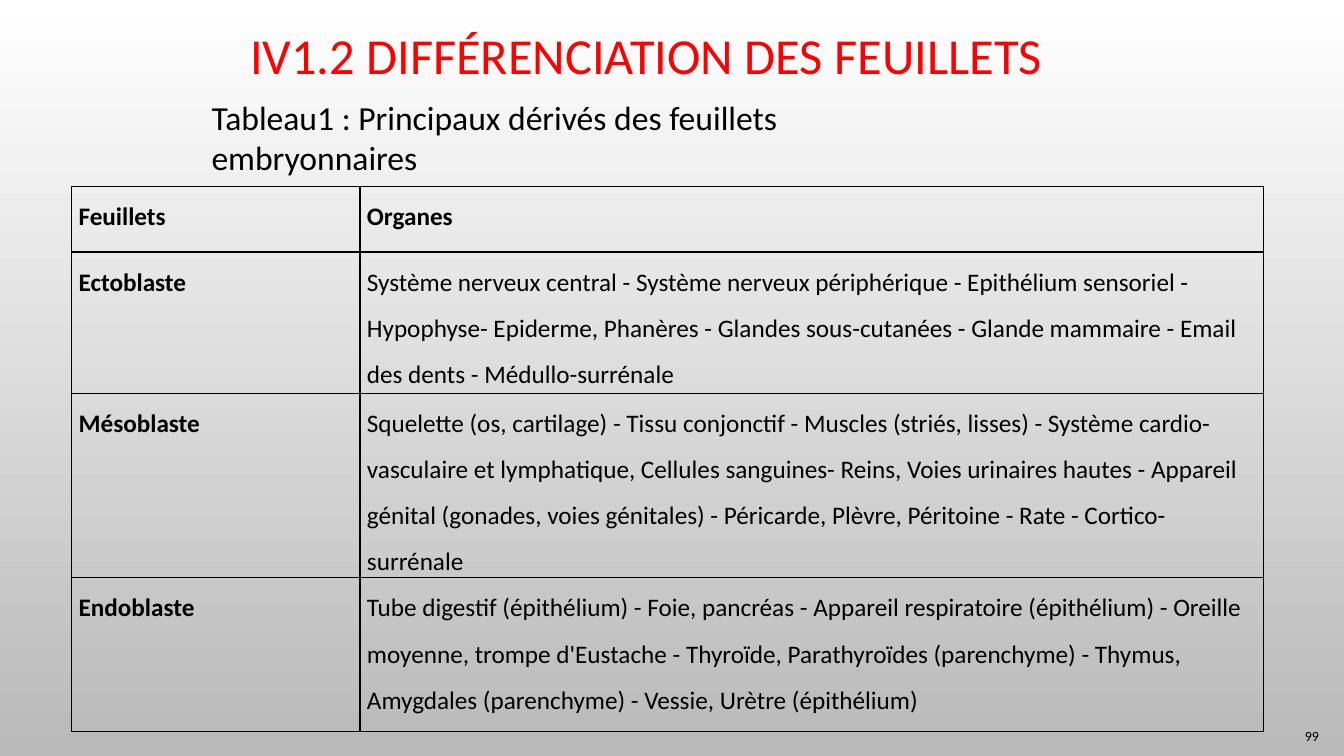
import pptx
import pptx.util
import pptx.dml.color
import pptx.enum.text
import pptx.oxml
import pptx.oxml.ns

Inches, Pt = pptx.util.Inches, pptx.util.Pt
RGBColor = pptx.dml.color.RGBColor
PP_ALIGN = pptx.enum.text.PP_ALIGN
MIDDLE = pptx.enum.text.MSO_ANCHOR.MIDDLE

RED = RGBColor(0xFF, 0x00, 0x00)
BLACK = RGBColor(0x00, 0x00, 0x00)
WHITE = RGBColor(0xFF, 0xFF, 0xFF)
GREY = RGBColor(0xB9, 0xB9, 0xB9)
FONT = "Calibri"

COL_WIDTHS = (2.86, 8.96)
ROW_HEIGHTS = (0.65, 1.4, 1.83, 1.53)
ROWS = (
    ("Feuillets", "Organes"),
    ("Ectoblaste",
     "Système nerveux central - Système nerveux périphérique - Epithélium "
     "sensoriel - Hypophyse- Epiderme, Phanères - Glandes sous-cutanées - "
     "Glande mammaire - Email des dents - Médullo-surrénale"),
    ("Mésoblaste",
     "Squelette (os, cartilage) - Tissu conjonctif - Muscles (striés, lisses) - "
     "Système cardio-vasculaire et lymphatique, Cellules sanguines- Reins, "
     "Voies urinaires hautes - Appareil génital (gonades, voies génitales) - "
     "Péricarde, Plèvre, Péritoine - Rate - Cortico-surrénale"),
    ("Endoblaste",
     "Tube digestif (épithélium) - Foie, pancréas - Appareil respiratoire "
     "(épithélium) - Oreille moyenne, trompe d'Eustache - Thyroïde, "
     "Parathyroïdes (parenchyme) - Thymus, Amygdales (parenchyme) - Vessie, "
     "Urètre (épithélium)"),
)


def write(tf, text, size, color=BLACK, bold=False, align=PP_ALIGN.LEFT):
    """Fill a text frame with one formatted paragraph and return it."""
    tf.text = text
    tf.word_wrap = True
    p = tf.paragraphs[0]
    p.alignment = align
    font = p.runs[0].font
    font.name, font.size, font.bold = FONT, Pt(size), bold
    font.color.rgb = color
    return p


def set_background(slide):
    fill = slide.background.fill
    fill.gradient()
    fill.gradient_angle = 270
    for stop, color in zip(fill.gradient_stops, (WHITE, GREY)):
        stop.color.rgb = color


def add_title(slide, box, text):
    sp = slide.shapes.title
    sp.left, sp.top, sp.width, sp.height = map(Inches, box)
    p = write(sp.text_frame, text, 36, RED, align=PP_ALIGN.CENTER)
    p.line_spacing = 0.9
    sp.text_frame.vertical_anchor = MIDDLE


def add_label(slide, box, text, size, align=PP_ALIGN.LEFT):
    tf = slide.shapes.add_textbox(*map(Inches, box)).text_frame
    write(tf, text, size, align=align)
    tf.vertical_anchor = MIDDLE


def set_borders(cell):
    tc_pr = cell._tc.get_or_add_tcPr()
    for i, side in enumerate(("lnL", "lnR", "lnT", "lnB")):
        tc_pr.insert(i, pptx.oxml.parse_xml(
            f'<a:{side} {pptx.oxml.ns.nsdecls("a")} w="{Pt(1)}">'
            f'<a:solidFill><a:srgbClr val="{BLACK}"/></a:solidFill></a:{side}>'))


def add_layers_table(slide, left, top):
    box = (left, top, sum(COL_WIDTHS), sum(ROW_HEIGHTS))
    table = slide.shapes.add_table(
        len(ROWS), len(COL_WIDTHS), *map(Inches, box)).table
    table.first_row = table.horz_banding = False
    for col, width in zip(table.columns, COL_WIDTHS):
        col.width = Inches(width)
    for r, (row, height) in enumerate(zip(table.rows, ROW_HEIGHTS)):
        row.height = Inches(height)
        for c, text in enumerate(ROWS[r]):
            cell = table.cell(r, c)
            cell.margin_left = cell.margin_right = Inches(0.07)
            cell.margin_top = cell.margin_bottom = 0
            cell.fill.background()
            set_borders(cell)
            header = r == 0
            p = write(cell.text_frame, text, 18, bold=header or c == 0,
                      align=PP_ALIGN.JUSTIFY if header else PP_ALIGN.LEFT)
            p.line_spacing = 1.5
            if header:
                p.space_after = Pt(10)


def main():
    prs = pptx.Presentation()
    prs.slide_width, prs.slide_height = Inches(13.33), Inches(7.5)
    slide = prs.slides.add_slide(prs.slide_layouts[5])
    set_background(slide)
    # Heading, table and its caption
    add_title(slide, (0.8, 0.23, 11.33, 0.7),
              "IV1.2 DIFFÉRENCIATION DES FEUILLETS ")
    add_layers_table(slide, 0.71, 1.85)
    add_label(slide, (2, 1.11, 7.9, 0.5),
              "Tableau1 : Principaux dérivés des feuillets embryonnaires", 24)
    # Page number
    add_label(slide, (12.34, 7.1, 0.84, 0.4), "99", 10, PP_ALIGN.RIGHT)
    prs.save("out.pptx")


if __name__ == "__main__":
    main()
